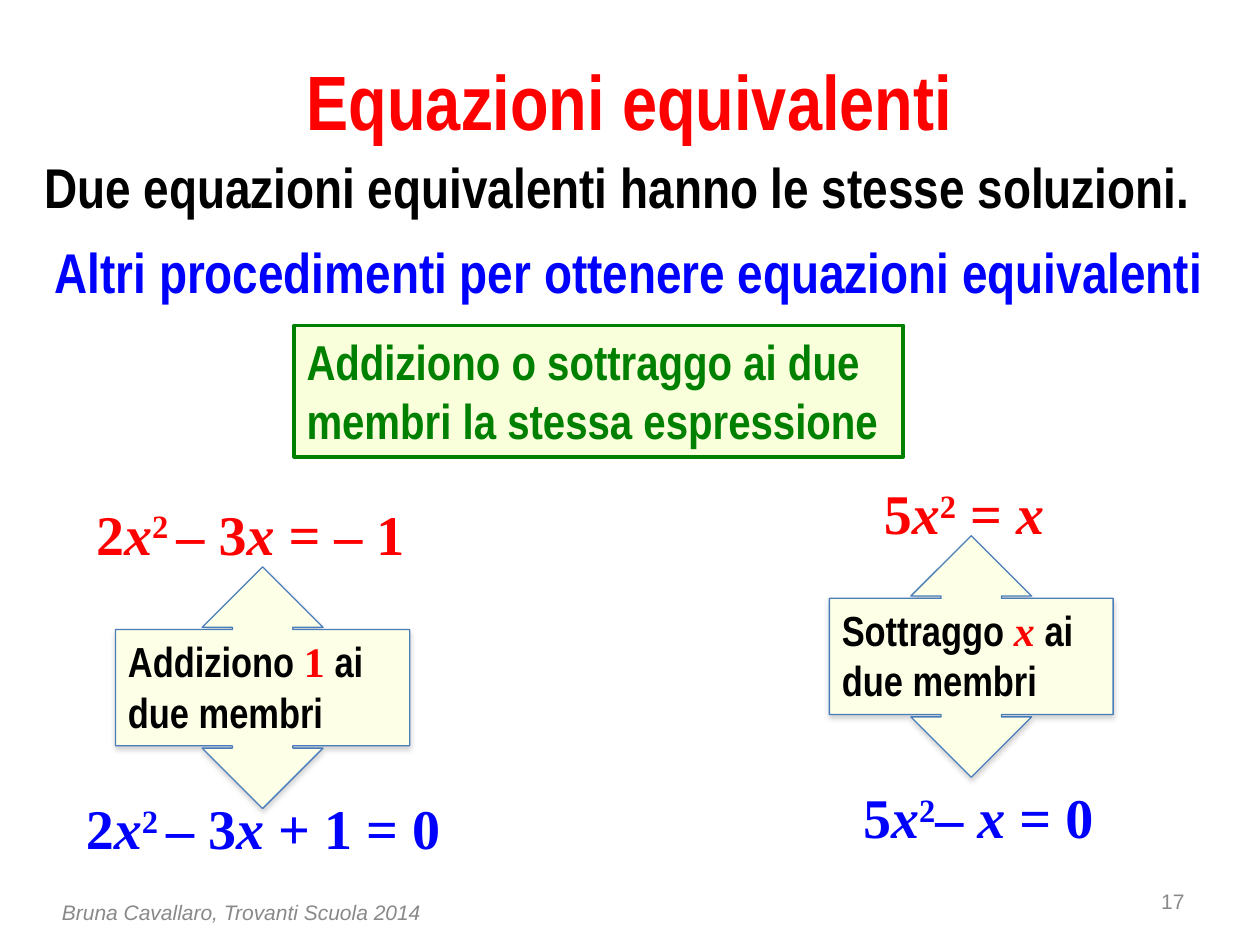
"""Build the slide on equivalent equations."""
from lxml.etree import SubElement
from pptx import Presentation
from pptx.dml.color import RGBColor
from pptx.enum.shapes import MSO_SHAPE
from pptx.enum.text import MSO_ANCHOR, MSO_AUTO_SIZE, PP_ALIGN
from pptx.oxml.ns import qn
from pptx.util import Cm, Pt

RED = RGBColor(0xFF, 0x00, 0x00)
BLUE = RGBColor(0x00, 0x00, 0xFF)
GREEN = RGBColor(0x00, 0x80, 0x00)
BLACK = RGBColor(0x00, 0x00, 0x00)
GRAY = RGBColor(0x89, 0x89, 0x89)
STEEL = RGBColor(0x4A, 0x7E, 0xBB)
CREAM = RGBColor(0xFD, 0xFF, 0xE7)
PALE_YELLOW = RGBColor(0xF9, 0xFF, 0xDB)


class SlideBuilder:
    """Hold the fonts and the current slide, and draw each kind of element."""

    text_font = "Arial Narrow"
    math_font = "Times New Roman"
    small_font = "Arial"

    def __init__(self, slide):
        self.slide = slide

    def style(self, font, name, size, color, bold=True):
        """Set the look of a paragraph's font."""
        font.name, font.size, font.bold = name, Pt(size), bold
        font.color.rgb = color

    def text(self, box, words, size, color, align=PP_ALIGN.LEFT,
             anchor=MSO_ANCHOR.TOP):
        """Add a bold wrapped line of text."""
        shape = self.slide.shapes.add_textbox(*map(Cm, box))
        shape.text_frame.word_wrap = True
        shape.text_frame.vertical_anchor = anchor
        paragraph = shape.text_frame.paragraphs[0]
        paragraph.text, paragraph.alignment = words, align
        self.style(paragraph.font, self.text_font, size, color)
        return paragraph

    def small_print(self, box, words, align, italic=False):
        """Add a gray footer text."""
        paragraph = self.text(box, words, 12, GRAY, align, MSO_ANCHOR.MIDDLE)
        self.style(paragraph.font, self.small_font, 12, GRAY, bold=False)
        paragraph.font.italic = italic

    def equation(self, left, top, width, color, parts):
        """Add an equation; "x" is italic and a part led by ^ is raised."""
        shape = self.slide.shapes.add_textbox(
            Cm(left), Cm(top), Cm(width), Cm(1.63))
        shape.text_frame.word_wrap = False
        shape.text_frame.auto_size = MSO_AUTO_SIZE.SHAPE_TO_FIT_TEXT
        paragraph = shape.text_frame.paragraphs[0]
        self.style(paragraph.font, self.math_font, 32, color)
        for part in parts:
            run = paragraph.add_run()
            run.text = part.lstrip("^")
            if part == "x":
                run.font.italic = True
            if part.startswith("^"):
                run.font._element.set("baseline", "30000")

    def panel(self, kind, box, fill, line, width):
        """Add a filled shape and return it with its paragraph."""
        shape = self.slide.shapes.add_shape(kind, *map(Cm, box))
        shape.shadow.inherit = False
        shape.fill.solid()
        shape.fill.fore_color.rgb = fill
        shape.line.color.rgb = line
        shape.line.width = Pt(width)
        shape.text_frame.word_wrap = True
        shape.text_frame.vertical_anchor = MSO_ANCHOR.TOP
        paragraph = shape.text_frame.paragraphs[0]
        paragraph.alignment = PP_ALIGN.LEFT
        return shape, paragraph

    def rule(self, box, words):
        """Add the framed rule."""
        _, paragraph = self.panel(MSO_SHAPE.RECTANGLE, box, PALE_YELLOW, GREEN, 2)
        paragraph.text = words
        self.style(paragraph.font, self.text_font, 28, GREEN)

    def callout(self, box, action, term, italic):
        """Add a double arrow that names the term used on both members."""
        shape, paragraph = self.panel(
            MSO_SHAPE.UP_DOWN_ARROW_CALLOUT, box, CREAM, STEEL, 0.75)
        for index, value in enumerate((0.25, 0.25, 0.25, 0.481)):
            shape.adjustments[index] = value
        self.soft_shadow(shape)
        for words, name, color in ((action, self.text_font, BLACK),
                                   (term, self.math_font, RED),
                                   (" ai due membri", self.text_font, BLACK)):
            run = paragraph.add_run()
            run.text = words
            self.style(run.font, name, 24, color)
            run.font.italic = italic and words == term

    def soft_shadow(self, shape):
        """Cast a soft gray shadow downwards."""
        effects = shape._element.spPr.find(qn("a:effectLst"))
        shadow = SubElement(effects, qn("a:outerShdw"), blurRad=str(Pt(3.1)),
                            dist=str(Pt(1.8)), dir="5400000", rotWithShape="0")
        color = SubElement(shadow, qn("a:srgbClr"), val="808080")
        SubElement(color, qn("a:alpha"), val="35000")


def main():
    """Draw the slide and save it."""
    presentation = Presentation()
    presentation.slide_width, presentation.slide_height = Cm(25.4), Cm(19.05)
    slide = presentation.slides.add_slide(presentation.slide_layouts[6])
    builder = SlideBuilder(slide)

    builder.small_print((18.2, 17.65, 5.93, 1.02), "17", PP_ALIGN.RIGHT)
    builder.small_print((0, 17.73, 9.74, 1.32),
                        "Bruna Cavallaro, Trovanti Scuola 2014",
                        PP_ALIGN.CENTER, italic=True)
    builder.text((1.27, 0.85, 22.86, 2.33), "Equazioni equivalenti", 44, RED,
                 PP_ALIGN.CENTER, MSO_ANCHOR.MIDDLE)
    builder.text((0.64, 2.96, 23.92, 1.63),
                 "Due equazioni equivalenti hanno le stesse soluzioni.", 32, BLACK)
    builder.text((0.85, 4.66, 23.71, 1.63),
                 "Altri procedimenti per ottenere equazioni equivalenti", 32, BLUE)
    builder.rule((5.93, 6.56, 12.28, 2.65),
                 "Addiziono o sottraggo ai due membri la stessa espressione")

    builder.equation(17.57, 9.53, 3.83, RED, ["5", "x", "^2", " = ", "x"])
    builder.equation(17.15, 15.66, 5.25, BLUE,
                     ["5", "x", "^2", "– ", "x", " = 0"])
    builder.callout((16.72, 10.8, 5.72, 4.87), "Sottraggo ", "x", italic=True)

    left_side = ["2", "x", "^2 ", "– 3", "x"]
    builder.equation(1.69, 9.95, 6.86, RED, left_side + [" = – 1"])
    builder.equation(1.48, 15.88, 7.8, BLUE, left_side + [" + 1 = 0"])
    builder.callout((2.33, 11.43, 5.93, 4.87), "Addiziono ", "1", italic=False)

    presentation.save("out.pptx")


if __name__ == "__main__":
    main()
